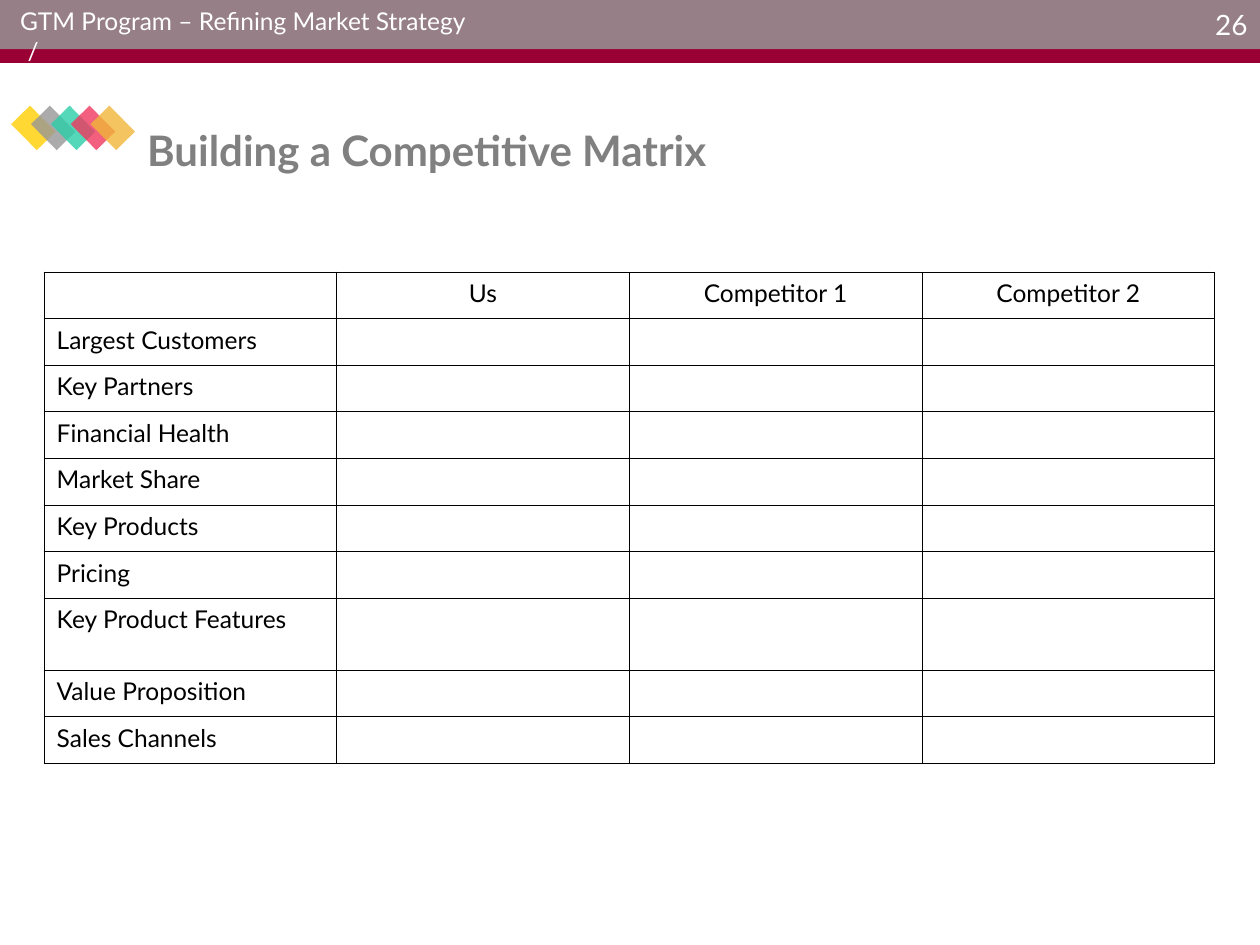
"""Build the competitive matrix slide."""
from lxml.etree import SubElement
from pptx import Presentation
from pptx.dml.color import RGBColor
from pptx.enum.shapes import MSO_SHAPE
from pptx.enum.text import MSO_ANCHOR, PP_ALIGN
from pptx.oxml.ns import qn
from pptx.util import Inches, Pt

WHITE = RGBColor(0xFF, 0xFF, 0xFF)
BLACK = RGBColor(0x00, 0x00, 0x00)
CRIMSON = RGBColor(0x99, 0x00, 0x33)
TITLE_GRAY = RGBColor(0x80, 0x80, 0x80)
GRAY = RGBColor(0x96, 0x96, 0x96)
YELLOW = RGBColor(0xFF, 0xCF, 0x01)
TEAL = RGBColor(0x2B, 0xCD, 0xA9)
PINK = RGBColor(0xF0, 0x38, 0x5E)
AMBER = RGBColor(0xF0, 0xB6, 0x38)

HEADERS = ["", "Us", "Competitor 1", "Competitor 2"]
CRITERIA = ["Largest Customers", "Key Partners", "Financial Health",
            "Market Share", "Key Products", "Pricing",
            "Key Product Features", "Value Proposition", "Sales Channels"]


class SlideBuilder:
    """Hold the style and the current slide."""

    font = "Lato"

    def __init__(self, prs):
        self.s = prs.slides.add_slide(prs.slide_layouts[6])

    def paragraph(self, tf, text, size, color, bold=False, align=PP_ALIGN.LEFT):
        p = tf.paragraphs[0]
        if text:
            p.add_run().text = text
        else:
            SubElement(p._p, qn("a:endParaRPr"), sz=str(size * 100))
        p.alignment = align
        p.font.name = self.font
        p.font.size = Pt(size)
        p.font.bold = bold
        p.font.color.rgb = color
        return p

    def rect(self, x, y, w, h, color, opacity=100, rotation=0):
        sp = self.s.shapes.add_shape(MSO_SHAPE.RECTANGLE, Inches(x), Inches(y),
                                     Inches(w), Inches(h))
        sp.shadow.inherit = False
        sp.rotation = rotation
        sp.fill.solid()
        sp.fill.fore_color.rgb = color
        sp.line.fill.background()
        if opacity < 100:
            clr = sp._element.spPr.find(qn("a:solidFill"))[0]
            SubElement(clr, qn("a:alpha"), val=str(opacity * 1000))
        return sp

    def text(self, x, y, w, h, text, size, color, bold=False, inset=None,
             anchor=MSO_ANCHOR.TOP):
        sp = self.s.shapes.add_textbox(Inches(x), Inches(y), Inches(w), Inches(h))
        tf = sp.text_frame
        tf.word_wrap = True
        tf.vertical_anchor = anchor
        if inset is not None:
            tf.margin_left = tf.margin_right = Inches(inset)
            tf.margin_top = tf.margin_bottom = Inches(inset)
        return self.paragraph(tf, text, size, color, bold)

    def border(self, cell, color, width):
        tc_pr = cell._tc.get_or_add_tcPr()
        for side in ("lnL", "lnR", "lnT", "lnB"):
            ln = SubElement(tc_pr, qn(f"a:{side}"), w=str(Pt(width)))
            fill = SubElement(ln, qn("a:solidFill"))
            SubElement(fill, qn("a:srgbClr"), val=str(color))

    def table(self, x, y, w, heights, rows, size):
        tbl = self.s.shapes.add_table(len(rows), len(rows[0]), Inches(x), Inches(y),
                                      Inches(w), Inches(sum(heights))).table
        tbl.first_row = tbl.horz_banding = False
        for r, (height, values) in enumerate(zip(heights, rows)):
            tbl.rows[r].height = Inches(height)
            for c, value in enumerate(values):
                cell = tbl.cell(r, c)
                self.border(cell, BLACK, 0.5)
                cell.fill.background()
                align = PP_ALIGN.LEFT if c == 0 else PP_ALIGN.CENTER
                self.paragraph(cell.text_frame, value, size, BLACK, align=align)


def main():
    prs = Presentation()
    prs.slide_width, prs.slide_height = Inches(10), Inches(7.5)
    b = SlideBuilder(prs)

    b.rect(0, 0, 10, 0.5, CRIMSON)
    for i, color in enumerate([YELLOW, GRAY, TEAL, PINK, AMBER]):
        b.rect(0.16 + i * 0.63 / 4, 0.87, 0.21, 0.29, color, 80, 315.4)

    band = b.rect(0, 0, 10, 0.39, GRAY, 85)
    tf = band.text_frame
    tf.vertical_anchor = MSO_ANCHOR.MIDDLE
    tf.margin_top, tf.margin_bottom = Inches(0.04), Inches(0.05)
    b.paragraph(tf, "26", 16, WHITE, align=PP_ALIGN.RIGHT)

    p = b.text(0.16, 0.05, 3.54, 0.47, "GTM Program – Refining Market Strategy /",
               14, WHITE, inset=0)
    p_pr = p._p.get_or_add_pPr()
    p_pr.set("marL", str(Inches(0.06)))
    p_pr.set("indent", str(-Inches(0.06)))

    b.text(1.07, 0.59, 8.42, 0.85, "Building a Competitive Matrix", 24,
           TITLE_GRAY, bold=True, anchor=MSO_ANCHOR.BOTTOM)

    rows = [HEADERS] + [[name, "", "", ""] for name in CRITERIA]
    heights = [0.57 if row[0] == "Key Product Features" else 0.37 for row in rows]
    b.table(0.35, 2.16, 9.29, heights, rows, 14)

    prs.save("out.pptx")


if __name__ == "__main__":
    main()
